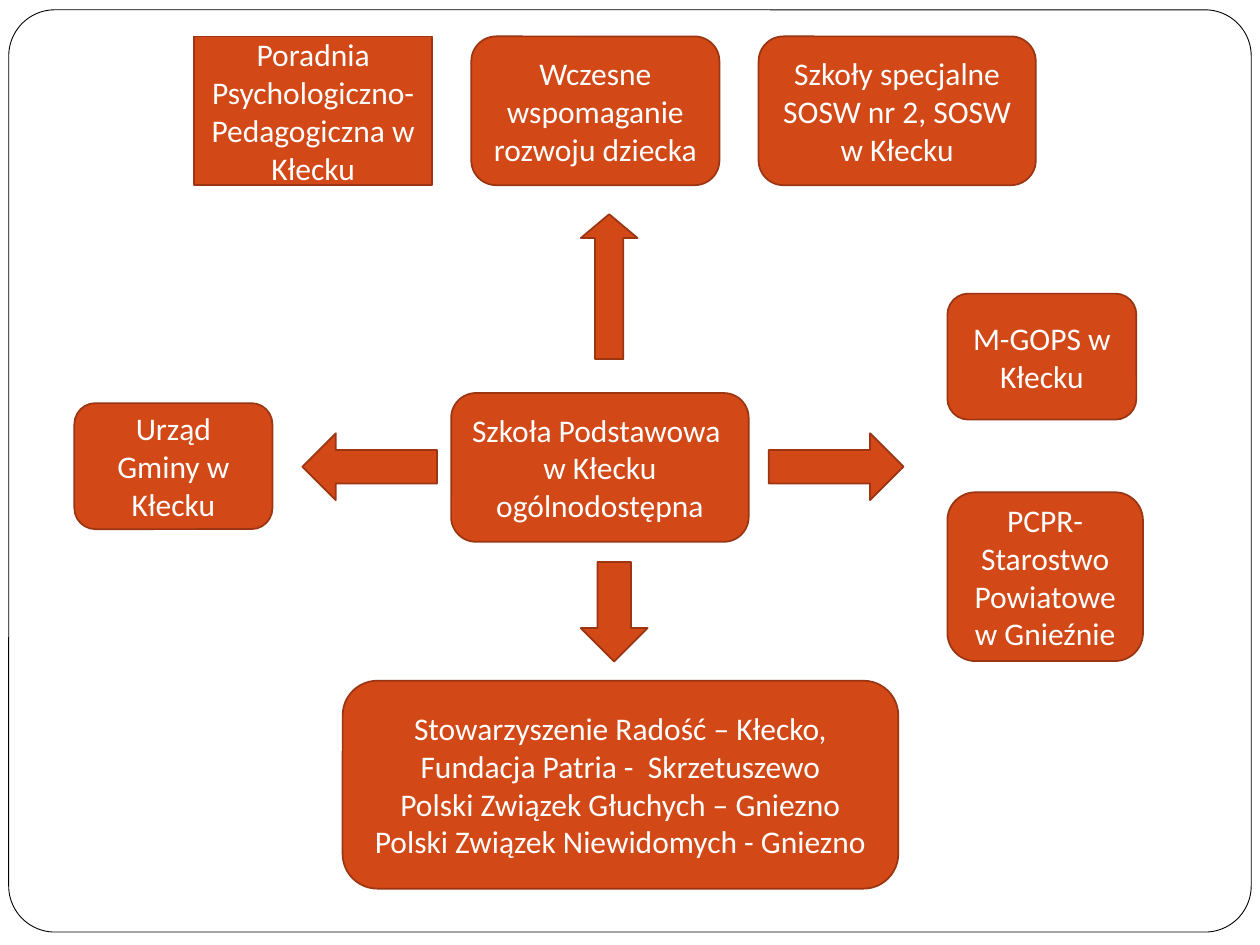
import dataclasses

import pptx
import pptx.dml.color
import pptx.enum.shapes
import pptx.enum.text
import pptx.util

Pt = pptx.util.Pt
RGB = pptx.dml.color.RGBColor.from_string
KIND = pptx.enum.shapes.MSO_SHAPE


@dataclasses.dataclass(frozen=True)
class Theme:
    fill: str = "D34817"
    edge: str = "9C3511"
    paper: str = "FFFFFF"
    frame: str = "000000"
    text: str = "FFFFFF"
    font: str = "Calibri"
    size: float = 18
    edge_width: float = 1
    frame_width: float = 0.5


@dataclasses.dataclass(frozen=True)
class Box:
    left: float
    top: float
    width: float
    height: float


THEME = Theme()


def set_all(target, values):
    for name, value in values.items():
        setattr(target, name, value)


def add_figure(page, kind, box, fill=THEME.fill, edge=THEME.edge,
               edge_width=THEME.edge_width):
    lengths = (Pt(n) for n in dataclasses.astuple(box))
    figure = page.shapes.add_shape(kind, *lengths)
    figure.shadow.inherit = False
    figure.fill.solid()
    figure.fill.fore_color.rgb = RGB(fill)
    figure.line.color.rgb = RGB(edge)
    figure.line.width = Pt(edge_width)
    return figure


def add_label(page, box, *lines, corner=None):
    """Rounded box with one centred paragraph for each line."""
    figure = add_figure(page, KIND.ROUNDED_RECTANGLE, box)
    if corner is not None:
        figure.adjustments[0] = corner
    frame = figure.text_frame
    set_all(frame, {"word_wrap": True,
                    "vertical_anchor": pptx.enum.text.MSO_ANCHOR.MIDDLE})
    for index, line in enumerate(lines):
        para = frame.add_paragraph() if index else frame.paragraphs[0]
        para.alignment = pptx.enum.text.PP_ALIGN.CENTER
        span = para.add_run()
        span.text = line
        set_all(span.font, {"name": THEME.font, "size": Pt(THEME.size)})
        span.font.color.rgb = RGB(THEME.text)


def add_page_frame(page, box):
    frame = add_figure(page, KIND.ROUNDED_RECTANGLE, box, THEME.paper,
                       THEME.frame, THEME.frame_width)
    frame.adjustments[0] = 0.05


def add_arrows(page, box):
    """Four arrows leading out of the school box."""
    length, breadth = 77, 38.2
    side_top = box.top + (box.height - breadth) / 2 - 0.4
    upright_left = box.left + 74.1
    add_figure(page, KIND.LEFT_ARROW,
               Box(box.left - 8 - length, side_top, length, breadth))
    add_figure(page, KIND.RIGHT_ARROW,
               Box(box.left + box.width + 11.5, side_top, length, breadth))
    up = add_figure(page, KIND.UP_ARROW,
                    Box(upright_left, box.top - 102.2, 32.4, 82.8))
    up.adjustments[1] = 0.42
    add_figure(page, KIND.DOWN_ARROW,
               Box(upright_left, box.top + box.height + 11.5, breadth, 56.9))


def add_support_row(page, box):
    """Specialist institutions, side by side with equal gaps."""
    members = [
        (136.1, "Poradnia Psychologiczno-Pedagogiczna w Kłecku", 0),
        (141.8, "Wczesne wspomaganie rozwoju dziecka", None),
        (158.4, "Szkoły specjalne SOSW nr 2, SOSW w Kłecku", None),
    ]
    gap = (box.width - sum(width for width, *_ in members)) / (len(members) - 1)
    left = box.left
    for width, text, corner in members:
        add_label(page, Box(left, box.top, width, box.height), text,
                  corner=corner)
        left += width + gap


def add_welfare_column(page, box):
    """Welfare offices: one at the top of the box, one at its foot."""
    add_label(page, Box(box.left, box.top, 108, 72), "M-GOPS w Kłecku")
    height = 96.5
    add_label(page, Box(box.left, box.top + box.height - height,
                        box.width, height),
              "PCPR- Starostwo Powiatowe w Gnieźnie")


def main():
    deck = pptx.Presentation()
    set_all(deck, {"slide_width": Pt(720), "slide_height": Pt(540)})
    page = deck.slides.add_slide(deck.slide_layouts[6])

    add_page_frame(page, Box(5, 5.6, 710, 527))

    # School in the centre, with its arrows
    school = Box(257.8, 224.6, 170, 85)
    add_label(page, school, "Szkoła Podstawowa  w Kłecku ogólnodostępna")
    add_arrows(page, school)

    # Partners around the school
    add_support_row(page, Box(110.9, 20.8, 481, 85))
    add_welfare_column(page, Box(541.4, 167.8, 111.8, 210))
    add_label(page, Box(195.8, 389, 317.5, 118.8),
              "Stowarzyszenie Radość – Kłecko,",
              "Fundacja Patria -  Skrzetuszewo",
              "Polski Związek Głuchych – Gniezno",
              "Polski Związek Niewidomych - Gniezno")
    add_label(page, Box(42.5, 230.4, 113.2, 72), "Urząd Gminy w Kłecku")

    deck.save("out.pptx")


if __name__ == "__main__":
    main()
